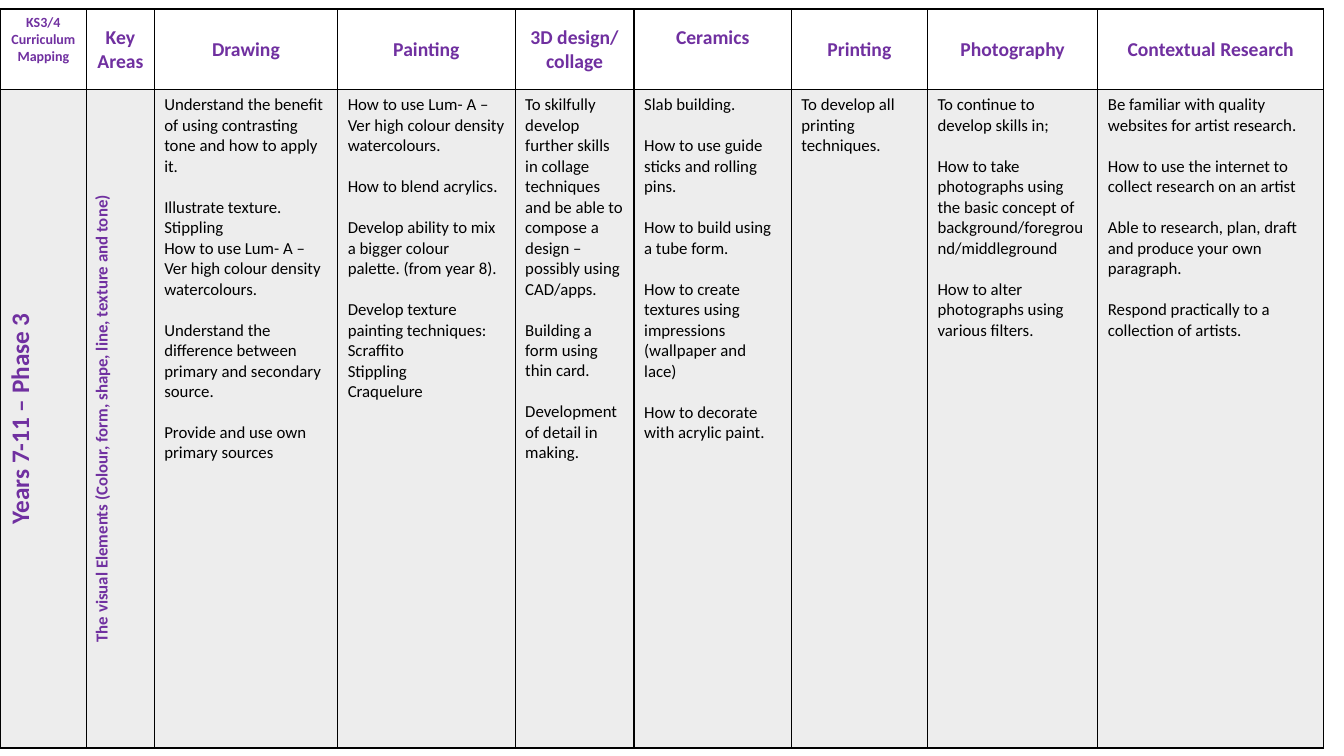
from lxml.etree import SubElement
from pptx import Presentation
from pptx.dml.color import RGBColor
from pptx.enum.text import MSO_ANCHOR, PP_ALIGN
from pptx.oxml.ns import qn
from pptx.util import Inches, Pt

PURPLE = RGBColor(0x70, 0x30, 0xA0)
BLACK = RGBColor(0x00, 0x00, 0x00)
GREY = RGBColor(0xA5, 0xA5, 0xA5)
FONT = "Calibri"
GROUP_GAP = 14.65
ROW_HEIGHTS = [0.8, 6.53]
COLUMN_WIDTHS = [0.86, 0.67, 1.82, 1.76, 1.18, 1.56, 1.35, 1.69, 2.24]
HEADINGS = [
    "KS3/4 Curriculum Mapping", "Key Areas", "Drawing", "Painting", "3D design/ collage",
    "Ceramics", "Printing", "Photography", "Contextual Research",
]
SIDE_LABELS = [
    ("Years 7-11 – Phase 3", 18),
    ("The visual Elements (Colour, form, shape, line, texture and tone)", 12),
]
WATERCOLOURS = "How to use Lum- A –Ver high colour density watercolours."
SKILLS = [
    [["Understand the benefit of using contrasting tone and how to apply it."],
     ["Illustrate texture.", "Stippling", WATERCOLOURS],
     ["Understand the difference between primary and secondary source."],
     ["Provide and use own primary sources"]],
    [[WATERCOLOURS],
     ["How to blend acrylics."],
     ["Develop ability to mix a bigger colour palette. (from year 8)."],
     ["Develop texture painting techniques:", "Scraffito", "Stippling", "Craquelure"]],
    [["To skilfully develop further skills in collage techniques and be able to "
      "compose a design – possibly using CAD/apps."],
     ["Building a form using thin card."],
     ["Development of detail in making."]],
    [["Slab building."],
     ["How to use guide sticks and rolling pins."],
     ["How to build using a tube form."],
     ["How to create textures using impressions (wallpaper and lace)"],
     ["How to decorate with acrylic paint."]],
    [["To develop all printing techniques."]],
    [["To continue to develop skills in;"],
     ["How to take photographs using the basic concept of "
      "background/foreground/middleground"],
     ["How to alter photographs using various filters."]],
    [["Be familiar with quality websites for artist research."],
     ["How to use the internet to collect research on an artist"],
     ["Able to research, plan, draft and produce your own paragraph."],
     ["Respond practically to a collection of artists."]],
]


def write_text(paragraph, text, size=12, color=BLACK, bold=False,
               alignment=PP_ALIGN.LEFT, space_before=0):
    """Write one formatted run into a paragraph."""
    paragraph.alignment = alignment
    paragraph.space_before = Pt(space_before)
    run = paragraph.add_run()
    run.text = text
    run.font.name = FONT
    run.font.size = Pt(size)
    run.font.bold = bold
    run.font.color.rgb = color


def add_borders(cell):
    """Draw a thin black line on each side of a cell."""
    properties = cell._tc.get_or_add_tcPr()
    for side in ("a:lnL", "a:lnR", "a:lnT", "a:lnB"):
        line = SubElement(properties, qn(side), w=str(Pt(1)))
        fill = SubElement(line, qn("a:solidFill"))
        SubElement(fill, qn("a:srgbClr"), val=str(BLACK))


def shade_cell(cell):
    """Fill a cell with grey at twenty percent opacity."""
    cell.fill.solid()
    cell.fill.fore_color.rgb = GREY
    color = cell._tc.tcPr.find(qn("a:solidFill")).find(qn("a:srgbClr"))
    SubElement(color, qn("a:alpha"), val="20000")


def write_label(cell, text, size=14, anchor=MSO_ANCHOR.MIDDLE):
    """Write a centred purple label in a cell."""
    cell.vertical_anchor = anchor
    write_text(cell.text_frame.paragraphs[0], text, size=size, color=PURPLE,
               bold=True, alignment=PP_ALIGN.CENTER)


def write_skills(cell, groups):
    """Write groups of skills with a gap between groups."""
    frame = cell.text_frame
    paragraph = frame.paragraphs[0]
    for group_index, group in enumerate(groups):
        for line_index, text in enumerate(group):
            if group_index or line_index:
                paragraph = frame.add_paragraph()
            gap = GROUP_GAP if group_index and not line_index else 0
            write_text(paragraph, text, space_before=gap)


def add_curriculum_table(slide):
    """Add the empty bordered table with its shaded second row."""
    shape = slide.shapes.add_table(
        len(ROW_HEIGHTS), len(COLUMN_WIDTHS), Inches(0), Inches(0.09),
        Inches(sum(COLUMN_WIDTHS)), Inches(sum(ROW_HEIGHTS)))
    table = shape.table
    table.first_row = False
    table.horz_banding = False
    for column, width in zip(table.columns, COLUMN_WIDTHS):
        column.width = Inches(width)
    for row, height in zip(table.rows, ROW_HEIGHTS):
        row.height = Inches(height)
    for cell in table.iter_cells():
        add_borders(cell)
    for column_index in range(len(COLUMN_WIDTHS)):
        table.cell(0, column_index).fill.background()
        shade_cell(table.cell(1, column_index))
    return table


def main():
    """Build the curriculum mapping slide."""
    presentation = Presentation()
    presentation.slide_width = Inches(13.33)
    presentation.slide_height = Inches(7.5)
    slide = presentation.slides.add_slide(presentation.slide_layouts[6])
    table = add_curriculum_table(slide)

    write_label(table.cell(0, 0), HEADINGS[0], size=10, anchor=MSO_ANCHOR.TOP)
    for column_index, heading in enumerate(HEADINGS[1:], start=1):
        write_label(table.cell(0, column_index), heading)
    table.cell(0, HEADINGS.index("Ceramics")).margin_bottom = Inches(0.28)

    for column_index, (label, size) in enumerate(SIDE_LABELS):
        cell = table.cell(1, column_index)
        write_label(cell, label, size=size)
        cell._tc.tcPr.set("vert", "vert270")
    for column_index, groups in enumerate(SKILLS, start=len(SIDE_LABELS)):
        write_skills(table.cell(1, column_index), groups)

    presentation.save("out.pptx")


if __name__ == "__main__":
    main()
